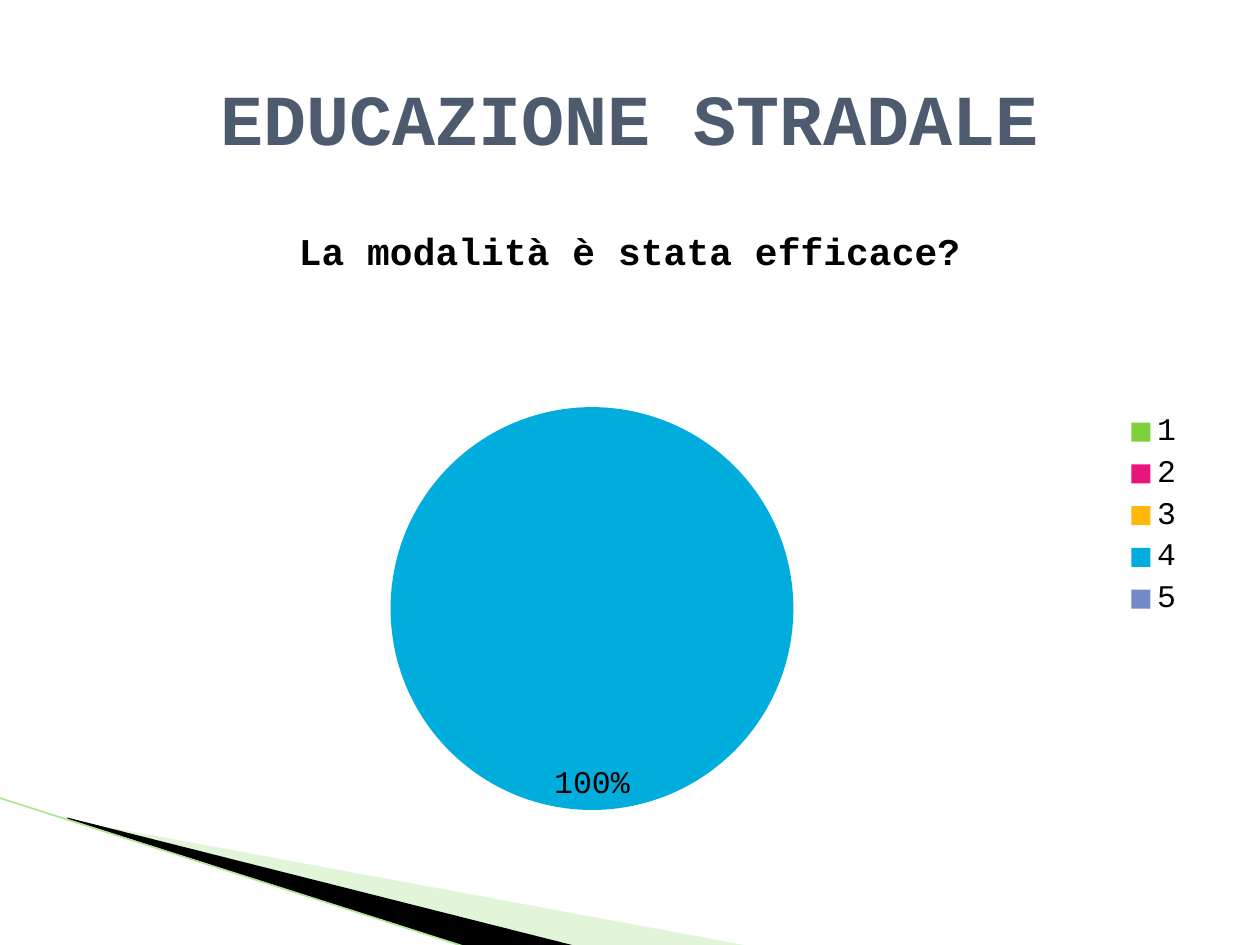
"""Build the road-safety survey slide: title, pie chart and corner wedges."""
from dataclasses import dataclass

import pptx
import pptx.chart.data
import pptx.dml.color
import pptx.enum.chart
import pptx.enum.shapes
import pptx.enum.text
import pptx.oxml
import pptx.oxml.ns
import pptx.util

Cm = pptx.util.Cm
Pt = pptx.util.Pt


@dataclass(frozen=True)
class Theme:
    face: str = "Courier New"
    title: str = "4E5B6F"
    text: str = "000000"
    pale_wedge: str = "B8E7A1"
    dark_wedge: str = "000000"
    edge: str = "B1E399"
    slices: tuple = ("7FD13B", "EA157A", "FEB80A", "00ADDC", "738AC8")
    title_size: float = 41
    question_size: float = 21.6
    chart_size: float = 18


def rgb(value):
    return pptx.dml.color.RGBColor.from_string(value)


def style(font, size, color, bold=False):
    font.name = theme.face
    font.size = Pt(size)
    font.bold = bold
    font.color.rgb = rgb(color)


theme = Theme()
deck = pptx.Presentation()
deck.slide_width, deck.slide_height = Cm(25.4), Cm(19.05)
page = deck.slides.add_slide(deck.slide_layouts[6])

wedges = (
    (theme.pale_wedge, 40, ((1.4, 16.53), (15.11, 19.07), (11.58, 19.07), (1.4, 16.51))),
    (theme.dark_wedge, 100, ((1.35, 16.48), (11.61, 19.07), (9.45, 19.1), (1.37, 16.51))),
)
for color, opacity, corners in wedges:
    start, *others = [(Cm(x), Cm(y)) for x, y in corners]
    builder = page.shapes.build_freeform(*start)
    builder.add_line_segments(others)
    wedge = builder.convert_to_shape()
    wedge.shadow.inherit = False
    wedge.fill.solid()
    wedge.fill.fore_color.rgb = rgb(color)
    wedge.line.fill.background()
    if opacity < 100:
        tint = wedge.fill._xPr.find(".//" + pptx.oxml.ns.qn("a:srgbClr"))
        alpha = pptx.oxml.parse_xml(
            f'<a:alpha {pptx.oxml.ns.nsdecls("a")} val="{opacity * 1000}"/>')
        tint.append(alpha)

edge = page.shapes.add_connector(
    pptx.enum.shapes.MSO_CONNECTOR.STRAIGHT, Cm(-0.03), Cm(16.08), Cm(9.42), Cm(19.1))
edge.line.color.rgb = rgb(theme.edge)
edge.line.width = Pt(0.95)
edge._element.spPr.append(
    pptx.oxml.parse_xml(f'<a:effectLst {pptx.oxml.ns.nsdecls("a")}/>'))

question = "La modalità è stata efficace?"
answers = pptx.chart.data.CategoryChartData()
answers.categories = ["1", "2", "3", "4", "5"]
answers.add_series(question, (None, None, None, 100, None))
chart = page.shapes.add_chart(
    pptx.enum.chart.XL_CHART_TYPE.PIE, Cm(1.27), Cm(4.11), Cm(22.86), Cm(12.57), answers).chart
style(chart.font, theme.chart_size, theme.text)

chart.has_title = True
chart.chart_title.include_in_layout = False
chart.chart_title.text_frame.text = question
style(chart.chart_title.text_frame.paragraphs[0].runs[0].font,
      theme.question_size, theme.text, bold=True)

chart.has_legend = True
chart.legend.position = pptx.enum.chart.XL_LEGEND_POSITION.RIGHT
chart.legend.include_in_layout = False
style(chart.legend.font, theme.chart_size, theme.text)

pie = chart.plots[0]
pie.vary_by_categories = True
series = pie.series[0]
for index, color in enumerate(theme.slices):
    fill = series.points[index].format.fill
    fill.solid()
    fill.fore_color.rgb = rgb(color)
first_point = series._element.find(pptx.oxml.ns.qn("c:dPt"))
first_point.addprevious(
    pptx.oxml.parse_xml(f'<c:explosion {pptx.oxml.ns.nsdecls("c")} val="25"/>'))

labels = series.data_labels
labels.show_percentage = True
labels.show_value = False
labels.number_format = "0%"
labels.number_format_is_linked = False
labels.position = pptx.enum.chart.XL_LABEL_POSITION.INSIDE_END
style(labels.font, theme.chart_size, theme.text)

title = page.shapes.add_textbox(Cm(1.27), Cm(0.76), Cm(22.86), Cm(3.18))
frame = title.text_frame
frame.word_wrap = True
frame.vertical_anchor = pptx.enum.text.MSO_ANCHOR.MIDDLE
frame.text = "EDUCAZIONE STRADALE"
frame.paragraphs[0].alignment = pptx.enum.text.PP_ALIGN.CENTER
style(frame.paragraphs[0].runs[0].font, theme.title_size, theme.title, bold=True)

deck.save("out.pptx")
